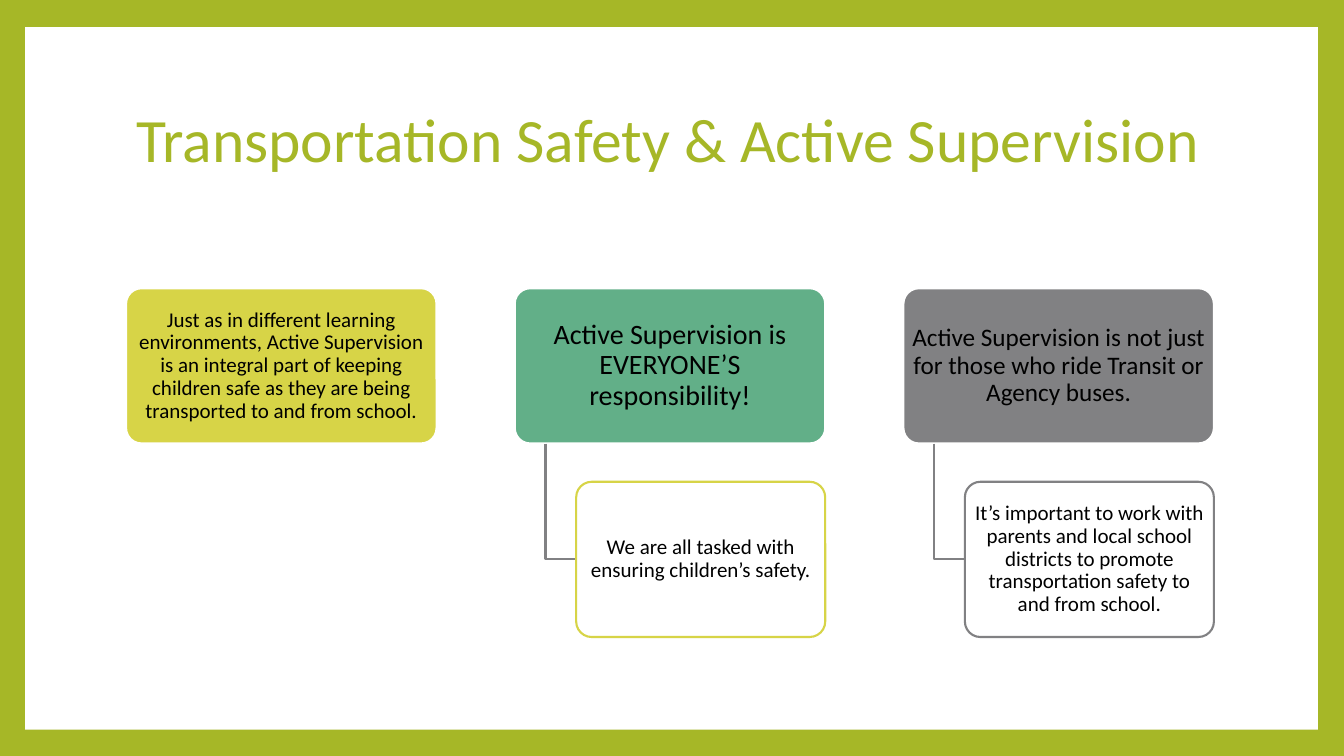
from dataclasses import dataclass

from pptx import Presentation
from pptx import util as u
from pptx.dml.color import RGBColor
from pptx.enum import shapes, text


@dataclass(frozen=True)
class Theme:
    font: str = "Calibri"
    green: str = "A6B727"
    lime: str = "D7D447"
    teal: str = "62AF88"
    grey: str = "818183"
    white: str = "FFFFFF"
    black: str = "000000"
    title: int = 44
    large: int = 20
    mid: int = 18
    small: int = 15
    line: float = 1.5


THEME = Theme()
HEAD_W, CARD_H = 3.08, 1.54
INDENT, DROP = 0.61, 1.92  # offset of a note from its head card

# head text, size, fill; note text, note outline
COLUMNS = [
    ("Just as in different learning environments, Active Supervision is an "
     "integral part of keeping children safe as they are being transported "
     "to and from school.", THEME.small, THEME.lime, None, None),
    ("Active Supervision is EVERYONE’S responsibility!",
     THEME.large, THEME.teal,
     "We are all tasked with ensuring children’s safety.", THEME.lime),
    ("Active Supervision is not just for those who ride Transit or Agency "
     "buses.", THEME.mid, THEME.grey,
     "It’s important to work with parents and local school districts to "
     "promote transportation safety to and from school.", THEME.grey),
]


def inches(*vals):
    return [u.Inches(v) for v in vals]


def assign(item, vals):
    for name, val in vals.items():
        setattr(item, name, val)


def paint(fill, color):
    fill.solid()
    fill.fore_color.rgb = RGBColor.from_string(color)


def stroke(shape, color):
    shape.shadow.inherit = False
    paint(shape.line.fill, color)
    shape.line.width = u.Pt(THEME.line)


def write(shape, words, size, color, align, pad):
    """Fill a shape with one middle-anchored paragraph; pad is (x, y)."""
    frame = shape.text_frame
    frame.text = words
    x, y = inches(*pad)
    assign(frame, dict(
        word_wrap=True, auto_size=text.MSO_AUTO_SIZE.NONE,
        vertical_anchor=text.MSO_ANCHOR.MIDDLE,
        margin_left=x, margin_right=x, margin_top=y, margin_bottom=y))
    para = frame.paragraphs[0]
    assign(para, dict(alignment=align, line_spacing=0.9))
    font = para.runs[0].font
    assign(font, dict(name=THEME.font, size=u.Pt(size)))
    font.color.rgb = RGBColor.from_string(color)


def frame(slide, box):
    paint(slide.background.fill, THEME.green)
    panel = slide.shapes.add_shape(shapes.MSO_SHAPE.RECTANGLE, *inches(*box))
    panel.shadow.inherit = False
    paint(panel.fill, THEME.white)
    panel.line.fill.background()


def heading(slide, box, words):
    title = slide.shapes.title
    assign(title, dict(zip(("left", "top", "width", "height"), inches(*box))))
    write(title, words, THEME.title, THEME.green, text.PP_ALIGN.LEFT,
          (0.1, 0.05))


def card(slide, box, words, size, fill, line):
    shape = slide.shapes.add_shape(
        shapes.MSO_SHAPE.ROUNDED_RECTANGLE, *inches(*box))
    shape.adjustments[0] = 0.1
    paint(shape.fill, fill)
    stroke(shape, line)
    pad = (0.03, 0.02) if size == THEME.small else (0.04, 0.03)
    write(shape, words, size, THEME.black, text.PP_ALIGN.CENTER, pad)


def elbow(slide, box):
    """Draw an L-shaped link down the left and along the foot of the box."""
    x, y, w, h = inches(*box)
    path = slide.shapes.build_freeform(x, y)
    path.add_line_segments([(x, y + h), (x + w, y + h)], close=False)
    shape = path.convert_to_shape()
    shape.fill.background()
    stroke(shape, THEME.grey)


def column(slide, x, y, head, size, fill, note, line):
    card(slide, (x, y, HEAD_W, CARD_H), head, size, fill, THEME.white)
    if note:
        half = INDENT / 2
        elbow(slide, (x + half, y + CARD_H, half, DROP - CARD_H / 2))
        card(slide, (x + INDENT, y + DROP, HEAD_W - INDENT, CARD_H),
             note, THEME.small, THEME.white, line)


def chart(slide, box):
    """Spread the columns evenly across the box (left, top, width)."""
    x, y, w = box
    step = (w - HEAD_W) / (len(COLUMNS) - 1)
    for i, parts in enumerate(COLUMNS):
        column(slide, x + i * step, y, *parts)


def main():
    deck = Presentation()
    deck.slide_width, deck.slide_height = inches(13.33, 7.5)
    slide = deck.slides.add_slide(deck.slide_layouts[5])
    frame(slide, (0.25, 0.27, 12.82, 6.97))
    # Keep the title above the white panel.
    tree = slide.shapes.title.element.getparent()
    tree.append(slide.shapes.title.element)
    heading(slide, (1.25, 0.67, 10.8, 1.48),
            "Transportation Safety & Active Supervision")
    chart(slide, (1.25, 2.86, 10.79))
    deck.save("out.pptx")


if __name__ == "__main__":
    main()
